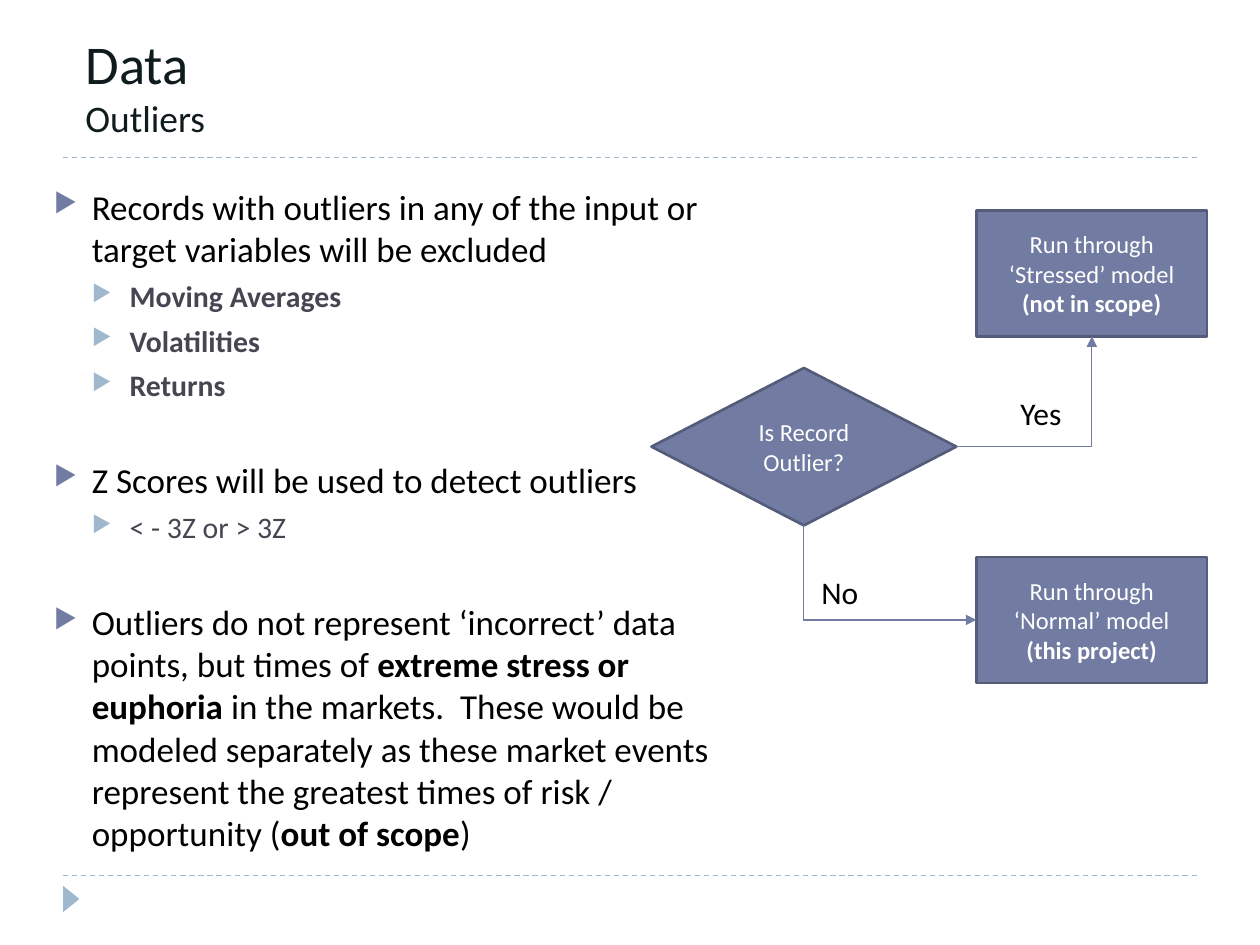
from lxml import etree
from pptx import Presentation
from pptx.dml.color import RGBColor
from pptx.enum.dml import MSO_LINE
from pptx.enum.shapes import MSO_CONNECTOR, MSO_SHAPE
from pptx.enum.text import MSO_ANCHOR, PP_ALIGN
from pptx.oxml.ns import qn
from pptx.util import Inches, Pt

STRAIGHT, ELBOW = MSO_CONNECTOR.STRAIGHT, MSO_CONNECTOR.ELBOW
RECTANGLE, DIAMOND = MSO_SHAPE.RECTANGLE, MSO_SHAPE.DIAMOND
TRIANGLE = MSO_SHAPE.ISOSCELES_TRIANGLE
DASH = MSO_LINE.DASH
TOP, MIDDLE, BOTTOM = MSO_ANCHOR.TOP, MSO_ANCHOR.MIDDLE, MSO_ANCHOR.BOTTOM
LEFT, CENTER = PP_ALIGN.LEFT, PP_ALIGN.CENTER
SITE_LEFT, SITE_BOTTOM, SITE_RIGHT = 1, 2, 3


def color(value):
    return RGBColor.from_string(value)


class SlideBuilder:
    font = "Calibri"
    ink, title_ink, sub_ink, white = "000000", "101B1D", "464653", "FFFFFF"
    accent, accent_edge, pale = "727CA3", "545C79", "9FB8CD"

    def __init__(self, page):
        self.page = page

    def add_spans(self, para, spans, size, ink, align=LEFT):
        """Fill a paragraph with (text, bold) spans."""
        para.alignment = align
        para.font.name = self.font
        para.font.size = Pt(size)
        para.font.color.rgb = color(ink)
        for text, bold in spans:
            span = para.add_run()
            span.text = text
            if bold:
                span.font.bold = True

    def text_box(self, left, top, width, height, anchor=TOP, wrap=True):
        box = self.page.shapes.add_textbox(
            Inches(left), Inches(top), Inches(width), Inches(height))
        box.text_frame.word_wrap = wrap
        box.text_frame.vertical_anchor = anchor
        return box.text_frame

    def label(self, left, top, width, text):
        frame = self.text_box(left, top, width, 0.4, wrap=False)
        self.add_spans(frame.paragraphs[0], [(text, False)], 18, self.ink)

    def title(self, heading, subheading):
        frame = self.text_box(0.58, 0.08, 9, 1.08, BOTTOM)
        self.add_spans(frame.paragraphs[0], [(heading, False)], 31.2, self.title_ink)
        self.add_spans(frame.add_paragraph(), [(subheading, False)], 21.4, self.title_ink)

    def bullet(self, para, level, spans, before):
        para.level = level
        para.space_before = Pt(before)
        props = para._p.get_or_add_pPr()
        props.set("marL", str(Inches(0.3 * (level + 1))))
        props.set("indent", str(Inches(-0.3)))
        tint = etree.SubElement(props, qn("a:buClr"))
        etree.SubElement(tint, qn("a:srgbClr")).set("val", (self.accent, self.pale)[level])
        etree.SubElement(props, qn("a:buSzPct")).set("val", "76000")
        etree.SubElement(props, qn("a:buChar")).set("char", "▶")
        self.add_spans(para, spans, (20, 17)[level], (self.ink, self.sub_ink)[level])

    def bullets(self, left, top, width, height, items):
        frame = self.text_box(left, top, width, height)
        for index, (level, spans) in enumerate(items):
            if index == 0:
                para, before = frame.paragraphs[0], 0
            else:
                # A new main point stands clear of the previous group
                para, before = frame.add_paragraph(), (32, 5)[level]
            self.bullet(para, level, spans, before)

    def shape(self, kind, left, top, width, height, fill, edge=None):
        shape = self.page.shapes.add_shape(
            kind, Inches(left), Inches(top), Inches(width), Inches(height))
        shape.shadow.inherit = False
        shape.fill.solid()
        shape.fill.fore_color.rgb = color(fill)
        if edge:
            shape.line.color.rgb = color(edge)
            shape.line.width = Pt(1.5)
        else:
            shape.line.fill.background()
        return shape

    def node(self, kind, left, top, width, height, spans):
        node = self.shape(kind, left, top, width, height, self.accent, self.accent_edge)
        frame = node.text_frame
        frame.word_wrap = True
        frame.vertical_anchor = MIDDLE
        self.add_spans(frame.paragraphs[0], spans, 14, self.white, CENTER)
        return node

    def connector(self, kind, start, end, tint):
        line = self.page.shapes.add_connector(
            kind, *(Inches(value) for value in (*start, *end)))
        line.line.color.rgb = color(tint)
        line.line.width = Pt(0.75)
        etree.SubElement(line._element.spPr, qn("a:effectLst"))
        return line

    def rule(self, top):
        self.connector(STRAIGHT, (0.5, top), (9.5, top), self.pale).line.dash_style = DASH

    def elbow(self, begin, begin_site, end, end_site, arrow):
        """One-bend connector leaving sideways; arrow is headEnd or tailEnd."""
        link = self.connector(ELBOW, (0, 0), (1, 1), self.accent)
        link.begin_connect(begin, begin_site)
        link.end_connect(end, end_site)
        props = link._element.spPr
        props.find(qn("a:prstGeom")).set("prst", "bentConnector2")
        etree.SubElement(props.find(qn("a:ln")), qn(f"a:{arrow}")).set("type", "triangle")


def main():
    deck = Presentation()
    deck.slide_width, deck.slide_height = Inches(10), Inches(7.5)
    slide = SlideBuilder(deck.slides.add_slide(deck.slide_layouts[6]))

    # Frame
    for top in (6.95, 1.25):
        slide.rule(top)
    slide.shape(TRIANGLE, 0.46, 7.07, 0.21, 0.13, slide.pale).rotation = 90

    # Text
    slide.title("Data", "Outliers")
    slide.bullets(0.33, 1.42, 5.42, 4.5, [
        (0, [("Records with outliers in any of the input or target variables "
              "will be excluded", False)]),
        *((1, [(name, True)]) for name in ("Moving Averages", "Volatilities", "Returns")),
        (0, [("Z Scores will be used to detect outliers", False)]),
        (1, [("< - 3Z or > 3Z", False)]),
        (0, [("Outliers do not represent ‘incorrect’ data points, but times of ", False),
             ("extreme stress or euphoria ", True),
             ("in the markets.  These would be modeled separately as these market "
              "events represent the greatest times of risk / opportunity (", False),
             ("out of scope", True), (")", False)]),
    ])

    # Decision flow
    normal, stressed = (
        slide.node(RECTANGLE, 7.75, top, 1.83, 1,
                   [(f"Run through ‘{model}’ model ", False), (scope, True)])
        for top, model, scope in ((4.42, "Normal", "(this project)"),
                                  (1.67, "Stressed", "(not in scope)")))
    decision = slide.node(DIAMOND, 5.17, 2.92, 2.42, 1.25, [("Is Record Outlier?", False)])
    slide.elbow(decision, SITE_RIGHT, stressed, SITE_BOTTOM, "tailEnd")
    slide.elbow(normal, SITE_LEFT, decision, SITE_BOTTOM, "headEnd")
    slide.label(8, 3.08, 0.61, "Yes")
    slide.label(6.42, 4.5, 0.52, "No")

    deck.save("out.pptx")


if __name__ == "__main__":
    main()
